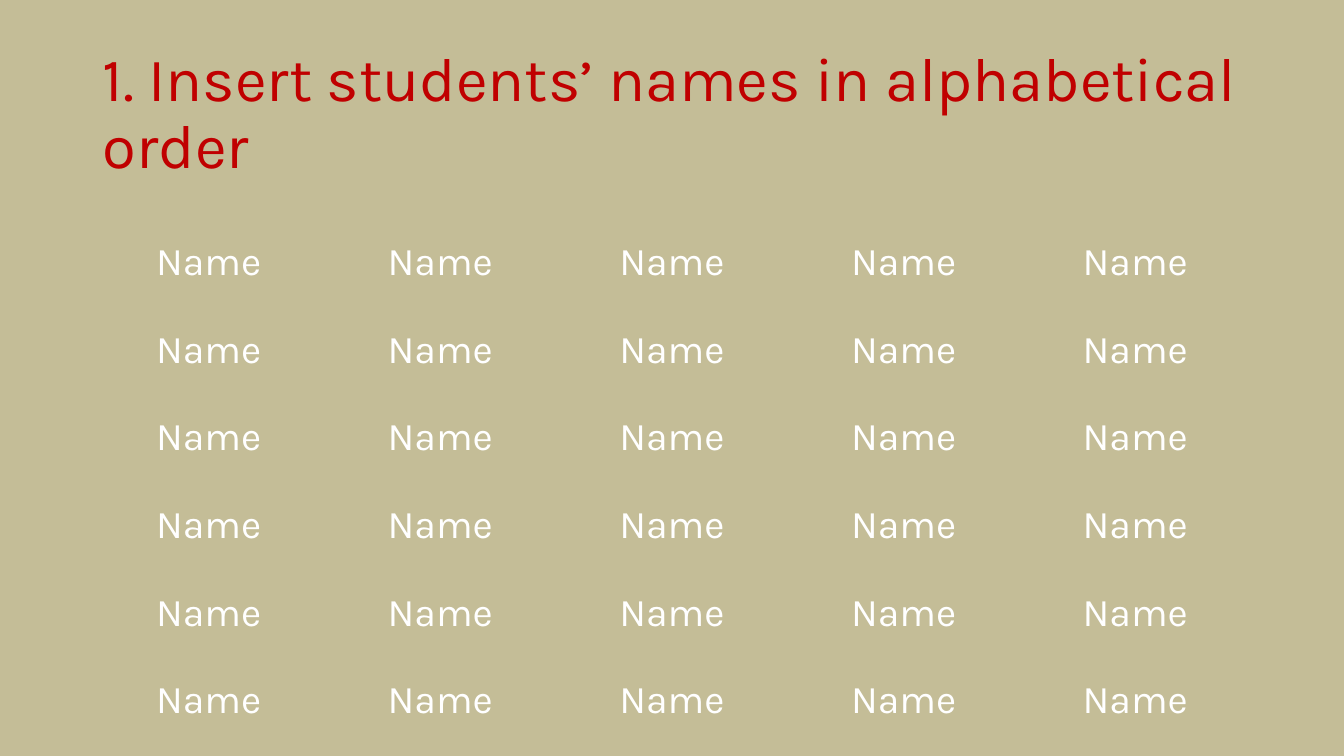
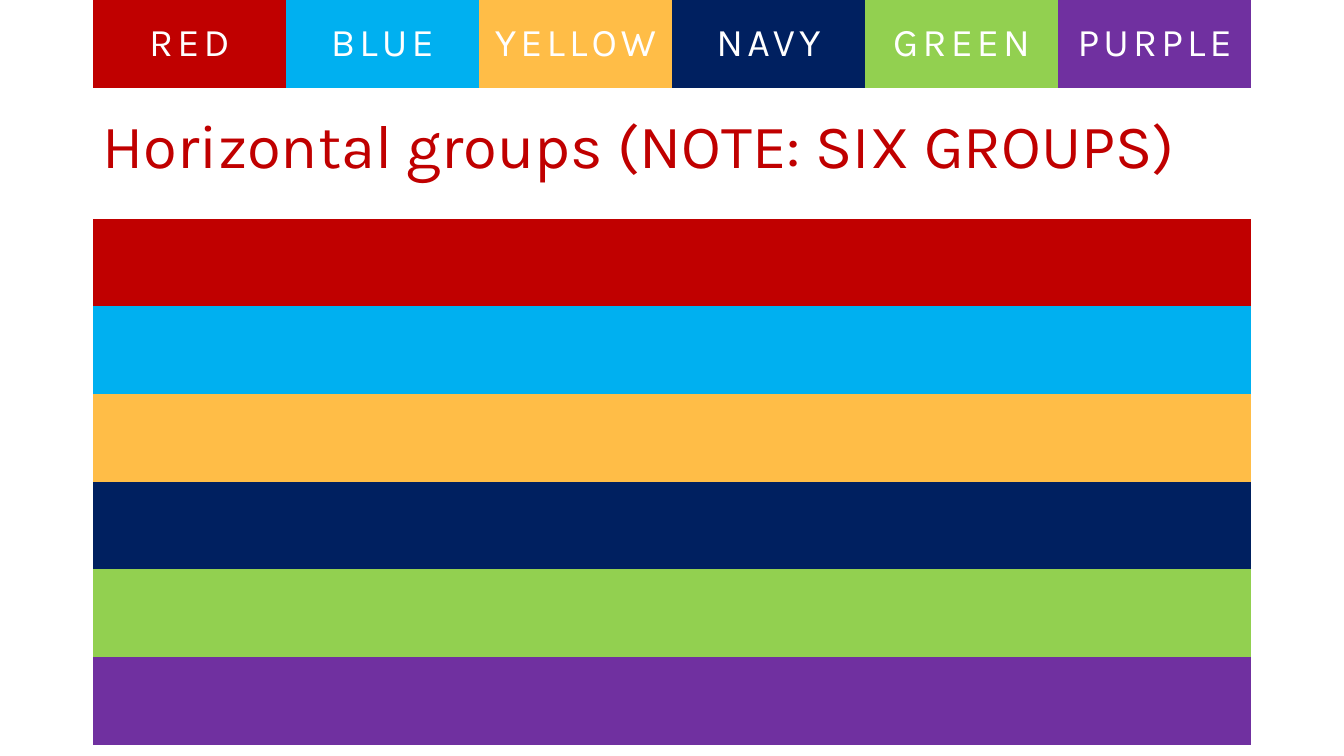
import pptx
import pptx.dml.color
import pptx.enum.text
import pptx.oxml.ns
import pptx.util

SLIDE_WIDTH, SLIDE_HEIGHT = 13.33, 7.5
MARGIN = 0.92
GRID_WIDTH = SLIDE_WIDTH - 2 * MARGIN
ROW_HEIGHT = 0.87
ROWS, COLUMNS = 6, 5
TITLE_BOX = (MARGIN, 0.4, SLIDE_WIDTH - MARGIN, 1.45)
GRID_BOX = (MARGIN, 2.17, GRID_WIDTH, ROWS * ROW_HEIGHT)
LEGEND_BOX = (MARGIN, 0, GRID_WIDTH, ROW_HEIGHT)

FONT = "Karla"
WHITE, SAND, TITLE_RED = "FFFFFF", "C4BD97", "C00000"
GROUPS = {
    "RED": "C00000",
    "BLUE": "00B0F0",
    "YELLOW": "FFBD47",
    "NAVY": "002060",
    "GREEN": "92D050",
    "PURPLE": "7030A0",
}
PLAIN_TABLE_STYLE = "{2D5ABB26-0587-4C30-8999-92F81FD0307C}"


def paint(fill, color):
    fill.solid()
    fill.fore_color.rgb = pptx.dml.color.RGBColor.from_string(color)


def inches(box):
    return [pptx.util.Inches(length) for length in box]


def style_paragraph(paragraph, size, color, spacing=0):
    for run in paragraph.runs:
        run.font.name = FONT
        run.font.size = pptx.util.Pt(size)
        paint(run.font.fill, color)
        if spacing:
            run.font._element.set("spc", str(spacing * 100))


def add_slide(presentation, background):
    slide = presentation.slides.add_slide(presentation.slide_layouts[6])
    paint(slide.background.fill, background)
    return slide


def add_title(slide, text, box=TITLE_BOX):
    text_frame = slide.shapes.add_textbox(*inches(box)).text_frame
    text_frame.word_wrap = True
    text_frame.vertical_anchor = pptx.enum.text.MSO_ANCHOR.BOTTOM
    text_frame.text = text
    paragraph = text_frame.paragraphs[0]
    paragraph.line_spacing = 0.9
    style_paragraph(paragraph, 44, TITLE_RED)


def add_grid(slide, box, texts, fills, spacing=0):
    shape = slide.shapes.add_table(len(texts), len(texts[0]), *inches(box))
    table = shape.table
    table.first_row = table.horz_banding = False
    for style in shape.element.iter(pptx.oxml.ns.qn("a:tableStyleId")):
        style.text = PLAIN_TABLE_STYLE
    for row, (row_texts, row_fills) in enumerate(zip(texts, fills)):
        for column, (text, fill) in enumerate(zip(row_texts, row_fills)):
            cell = table.cell(row, column)
            cell.vertical_anchor = pptx.enum.text.MSO_ANCHOR.MIDDLE
            if fill:
                paint(cell.fill, fill)
            else:
                cell.fill.background()
            cell.text_frame.text = text
            paragraph = cell.text_frame.paragraphs[0]
            paragraph.alignment = pptx.enum.text.PP_ALIGN.CENTER
            style_paragraph(paragraph, 28, WHITE, spacing)


def add_names_slide(presentation):
    slide = add_slide(presentation, SAND)
    add_grid(slide, GRID_BOX, [["Name"] * COLUMNS] * ROWS, [[None] * COLUMNS] * ROWS)
    add_title(slide, "1. Insert students’ names in alphabetical order")


def add_groups_slide(presentation):
    slide = add_slide(presentation, WHITE)
    add_title(slide, "Horizontal groups (NOTE: SIX GROUPS)")
    bands = [[color] * COLUMNS for color in GROUPS.values()]
    add_grid(slide, GRID_BOX, [[""] * COLUMNS] * ROWS, bands)
    add_grid(slide, LEGEND_BOX, [list(GROUPS)], [list(GROUPS.values())], spacing=3)


def main():
    presentation = pptx.Presentation()
    presentation.slide_width = pptx.util.Inches(SLIDE_WIDTH)
    presentation.slide_height = pptx.util.Inches(SLIDE_HEIGHT)
    add_names_slide(presentation)
    add_groups_slide(presentation)
    presentation.save("out.pptx")


if __name__ == "__main__":
    main()
